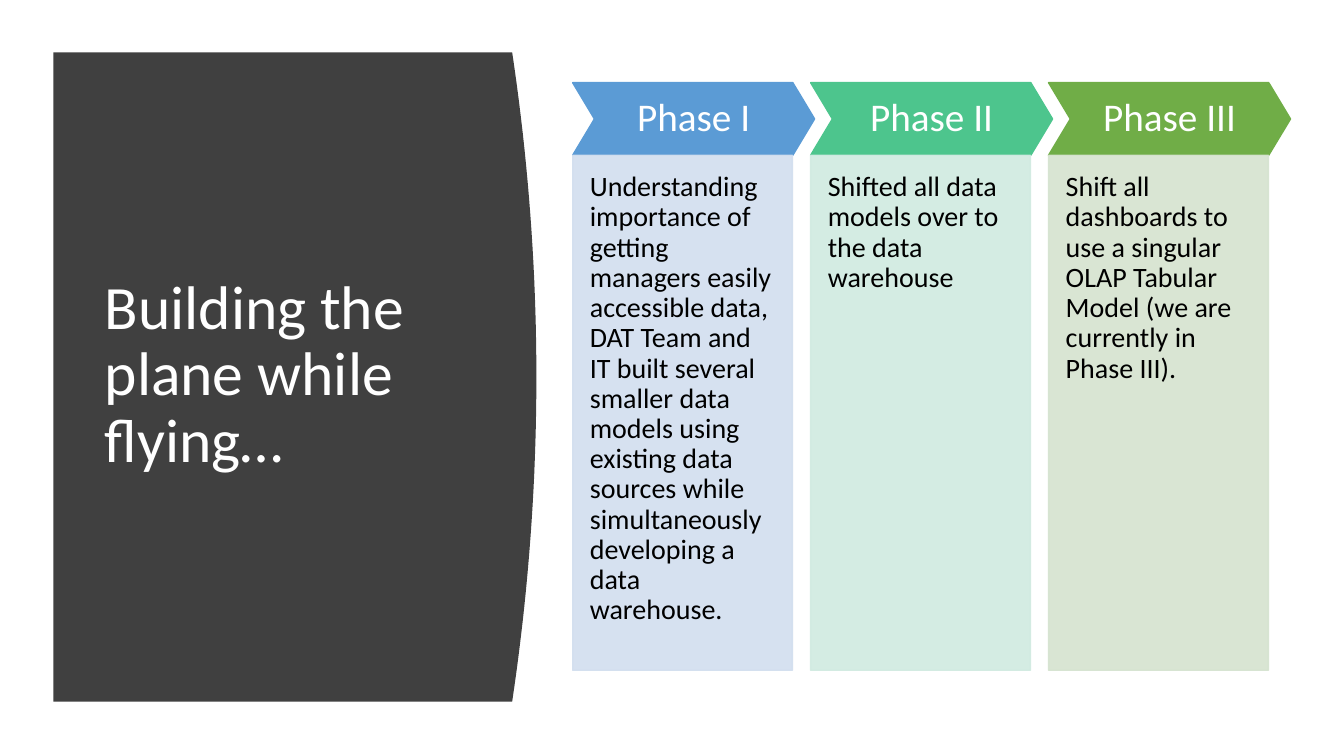
"""Build a slide with a curved title panel beside three phase columns."""
import pptx
import pptx.dml.color
import pptx.enum.shapes
import pptx.enum.text
import pptx.oxml
import pptx.oxml.ns
import pptx.util

Inches = pptx.util.Inches
Pt = pptx.util.Pt
RGBColor = pptx.dml.color.RGBColor
Shape = pptx.enum.shapes.MSO_SHAPE
Anchor = pptx.enum.text.MSO_ANCHOR
Align = pptx.enum.text.PP_ALIGN

WHITE = RGBColor(0xFF, 0xFF, 0xFF)
BLACK = RGBColor(0x00, 0x00, 0x00)
CHARCOAL = RGBColor(0x40, 0x40, 0x40)
BLUE = RGBColor(0x5B, 0x9B, 0xD5)
PALE_BLUE = RGBColor(0xD2, 0xDE, 0xEF)
TEAL = RGBColor(0x4D, 0xC5, 0x8D)
PALE_TEAL = RGBColor(0xD0, 0xEA, 0xE1)
GREEN = RGBColor(0x70, 0xAD, 0x47)
PALE_GREEN = RGBColor(0xD5, 0xE3, 0xCF)

PHASES = [
    ("Phase I", BLUE, PALE_BLUE,
     "Understanding importance of getting managers easily accessible data, "
     "DAT Team and IT built several smaller data models using existing data "
     "sources while simultaneously developing a data warehouse."),
    ("Phase II", TEAL, PALE_TEAL,
     "Shifted all data models over to the data warehouse"),
    ("Phase III", GREEN, PALE_GREEN,
     "Shift all dashboards to use a singular OLAP Tabular Model "
     "(we are currently in Phase III)."),
]


def write_text(shape, text, size, color, align, anchor, insets):
    """Fill a shape with one styled paragraph; insets run left, top, right, bottom."""
    frame = shape.text_frame
    frame.word_wrap = True
    frame.vertical_anchor = anchor
    frame.margin_left, frame.margin_top, frame.margin_right, frame.margin_bottom = (
        Inches(inset) for inset in insets)
    para = frame.paragraphs[0]
    para.text = text
    para.alignment = align
    para.line_spacing = 0.9
    para.font.name = "Calibri"
    para.font.size = Pt(size)
    para.font.color.rgb = color


def add_block(slide, kind, left, top, width, height, color):
    """Add a preset shape whose fill and outline share one colour."""
    block = slide.shapes.add_shape(
        kind, Inches(left), Inches(top), Inches(width), Inches(height))
    block.shadow.inherit = False
    block.fill.solid()
    block.fill.fore_color.rgb = color
    block.line.color.rgb = color
    block.line.width = Pt(1)
    return block


deck = pptx.Presentation()
deck.slide_width = Inches(13.33)
deck.slide_height = Inches(7.5)
page = deck.slides.add_slide(deck.slide_layouts[6])

panel_left, panel_top, panel_bottom = 0.53, 0.52, 6.96
edge_right, bulge, edge_steps = 5.08, 0.24, 40
edge = []
for step in range(edge_steps + 1):
    share = step / edge_steps
    x = edge_right + bulge * (1 - (2 * share - 1) ** 2)
    y = panel_top + (panel_bottom - panel_top) * share
    edge.append((Inches(x), Inches(y)))
outline = page.shapes.build_freeform(Inches(panel_left), Inches(panel_top))
outline.add_line_segments(edge + [(Inches(panel_left), Inches(panel_bottom))], close=True)
panel = outline.convert_to_shape()
panel.shadow.inherit = False
panel.fill.solid()
panel.fill.fore_color.rgb = CHARCOAL
panel.line.fill.background()

title = page.shapes.add_textbox(Inches(0.94), Inches(1.11), Inches(3.74), Inches(5.24))
write_text(title, "Building the plane while flying…", 44, WHITE,
           Align.LEFT, Anchor.MIDDLE, (0.1, 0.05, 0.1, 0.05))

for index, (name, strong, pale, description) in enumerate(PHASES):
    left = 5.68 + 2.36 * index
    header = add_block(page, Shape.CHEVRON, left, 0.82, 2.4, 0.72, strong)
    header.adjustments[0] = 0.3
    write_text(header, name, 28, WHITE, Align.CENTER, Anchor.MIDDLE, (0.09,) * 4)

    body = add_block(page, Shape.RECTANGLE, left, 1.54, 2.18, 5.11, pale)
    for tint in body.element.spPr.iter(pptx.oxml.ns.qn("a:srgbClr")):
        tint.append(pptx.oxml.parse_xml(
            f'<a:alpha {pptx.oxml.ns.nsdecls("a")} val="90000"/>'))
    write_text(body, description, 20, BLACK, Align.LEFT, Anchor.TOP,
               (0.17, 0.17, 0.17, 0.34))

deck.save("out.pptx")
